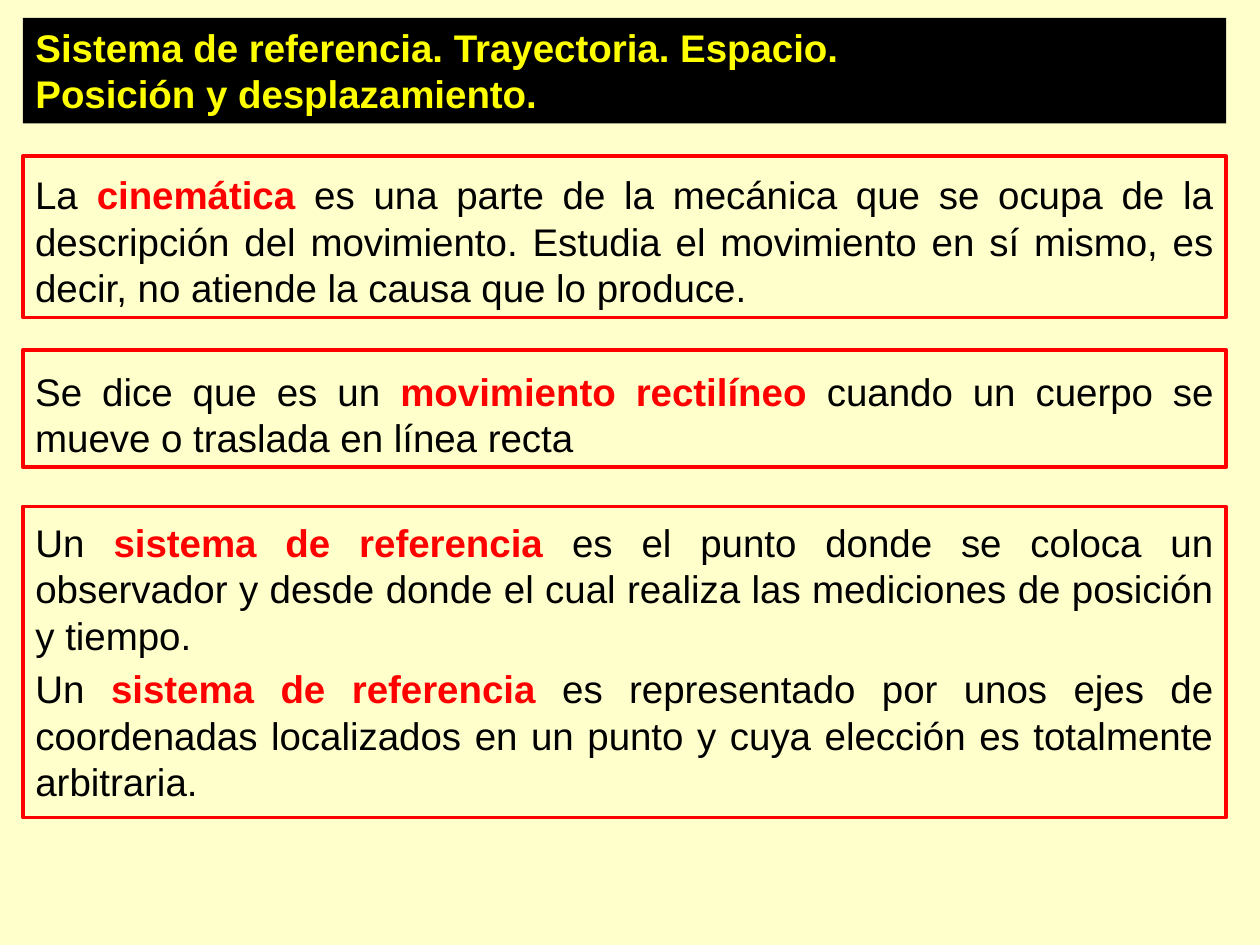
from pptx import Presentation
from pptx import util as u
from pptx.dml.color import RGBColor
from pptx.enum import shapes, text
from pptx.oxml.ns import qn

hues = {"page": "FFFFCC", "bar": "000000", "head": "FFFF00",
        "ink": "000000", "key": "FF0000"}
left, wide = u.Cm(0.46), u.Cm(24.26)


def tint(name):
    return RGBColor.from_string(hues[name])


def write(box, lines, ink="ink", bold=False, align=text.PP_ALIGN.JUSTIFY, gap=0):
    frame = box.text_frame
    frame.word_wrap = True
    frame.auto_size = text.MSO_AUTO_SIZE.NONE
    frame.vertical_anchor = text.MSO_ANCHOR.TOP
    for i, line in enumerate(lines):
        para = frame.add_paragraph() if i else frame.paragraphs[0]
        props = para._p.get_or_add_pPr()
        props.set("marL", "0")
        props.set("indent", "0")
        props.append(props.makeelement(qn("a:buNone"), {}))
        para.alignment = align
        para.line_spacing = 1.0
        para.space_before = u.Pt(gap if i else 0)
        for j, part in enumerate(line.split("*")):
            key = j % 2 == 1
            run = para.add_run()
            run.text = part
            run.font.name = "Arial"
            run.font.size = u.Pt(22)
            run.font.bold = bold or key
            run.font.color.rgb = tint("key" if key else ink)


deck = Presentation()
deck.slide_width, deck.slide_height = u.Cm(25.4), u.Cm(19.05)
slide = deck.slides.add_slide(deck.slide_layouts[1])
slide.background.fill.solid()
slide.background.fill.fore_color.rgb = tint("page")

title = slide.shapes.title
title.left, title.top, title.width, title.height = left, u.Cm(0.36), wide, u.Cm(2.13)
title.fill.solid()
title.fill.fore_color.rgb = tint("bar")
write(title, ["Sistema de referencia. Trayectoria. Espacio.",
              "Posición y desplazamiento."],
      ink="head", bold=True, align=text.PP_ALIGN.LEFT)

notes = [
    (3.33, 3.07, "La *cinemática* es una parte de la mecánica que se ocupa de la "
     "descripción del movimiento. Estudia el movimiento en sí mismo, es decir, "
     "no atiende la causa que lo produce."),
    (7.29, 2.13, "Se dice que es un *movimiento rectilíneo* cuando un cuerpo se "
     "mueve o traslada en línea recta"),
]
for top, high, line in notes:
    box = slide.shapes.add_textbox(left, u.Cm(top), wide, u.Cm(high))
    write(box, [line])

body = slide.placeholders[1]
body.left, body.top, body.width, body.height = left, u.Cm(10.34), wide, u.Cm(7.72)
write(body, [
    "Un *sistema de referencia* es el punto donde se coloca un observador y desde "
    "donde el cual realiza las mediciones de posición y tiempo.",
    "Un *sistema de referencia* es representado por unos ejes de coordenadas "
    "localizados en un punto y cuya elección es totalmente arbitraria.",
], gap=4.4)

for top, high in [(3.15, 3.25), (7.06, 2.36), (10.21, 6.27)]:
    edge = slide.shapes.add_shape(shapes.MSO_SHAPE.RECTANGLE,
                                  left, u.Cm(top), wide, u.Cm(high))
    edge.shadow.inherit = False
    edge.fill.background()
    edge.line.color.rgb = tint("key")
    edge.line.width = u.Pt(2)

deck.save("out.pptx")
